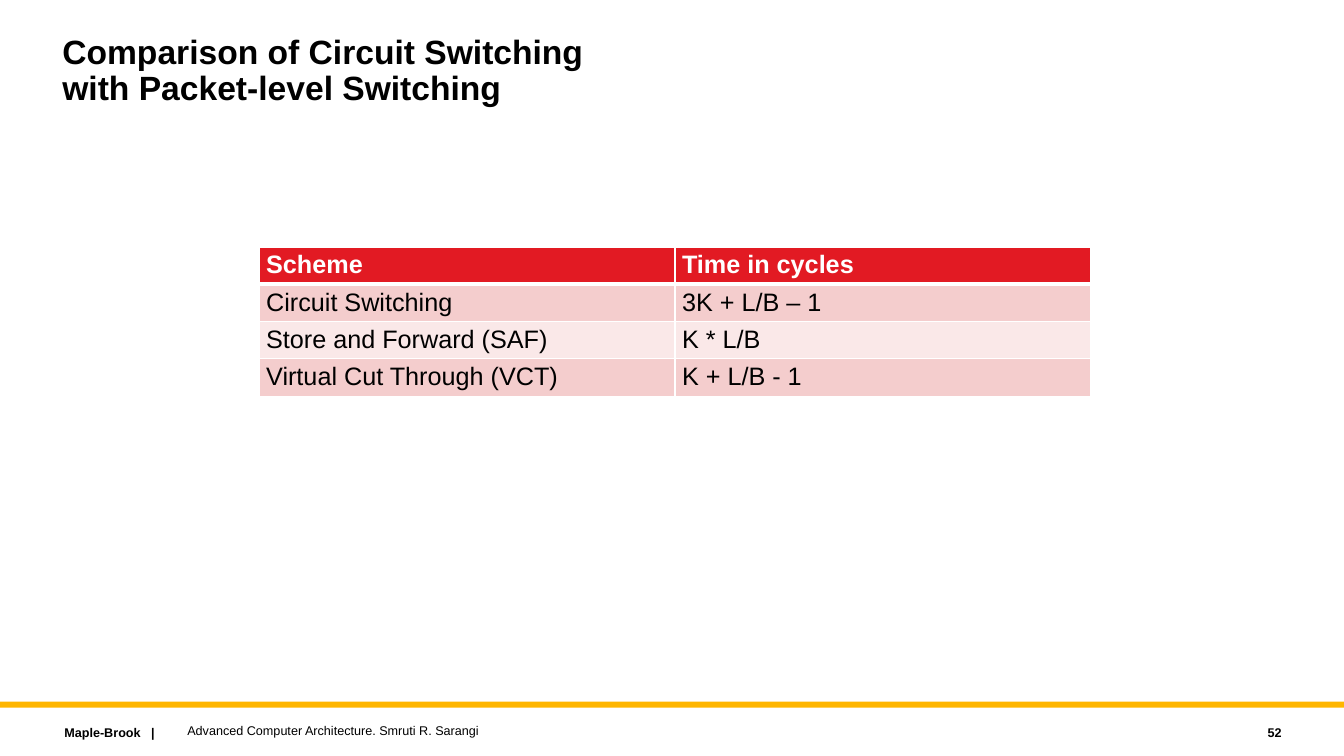
from pptx import Presentation
from pptx.dml.color import RGBColor
from pptx.enum import shapes, text
from pptx.oxml import parse_xml
from pptx.oxml.ns import nsdecls
from pptx.util import Inches, Pt

FONT = "Arial"
COLOURS = {
    "ink": "000000",
    "white": "FFFFFF",
    "header": "E21A23",
    "odd_row": "F4CDCD",
    "even_row": "FAE8E8",
    "bar": "FFB600",
}
SCHEMES = [
    ("Scheme", "Time in cycles"),
    ("Circuit Switching", "3K + L/B – 1"),
    ("Store and Forward (SAF)", "K * L/B"),
    ("Virtual Cut Through (VCT)", "K + L/B - 1"),
]


def colour(name):
    return RGBColor.from_string(COLOURS[name])


def style_runs(para, size, bold=False, ink="ink"):
    for span in para.runs:
        span.font.name = FONT
        span.font.size = Pt(size)
        span.font.bold = bold
        span.font.color.rgb = colour(ink)


def add_label(page, box, words, size, bold=False, align=text.PP_ALIGN.LEFT,
              anchor=text.MSO_ANCHOR.MIDDLE):
    """Add a one-paragraph text box and return its paragraph."""
    frame = page.shapes.add_textbox(*map(Inches, box)).text_frame
    frame.word_wrap = True
    frame.vertical_anchor = anchor
    para = frame.paragraphs[0]
    para.text = words
    para.alignment = align
    style_runs(para, size, bold)
    return para


def add_title(page, box):
    para = add_label(page, box,
                     "Comparison of Circuit Switching\vwith Packet-level Switching",
                     24, True, anchor=text.MSO_ANCHOR.TOP)
    para.line_spacing = 0.9


def border_cell(cell, widths):
    """Draw white borders; widths maps each side's tag to points."""
    properties = cell._tc.get_or_add_tcPr()
    for position, (side, width) in enumerate(widths.items()):
        properties.insert(position, parse_xml(
            f'<a:{side} {nsdecls("a")} w="{Pt(width)}"><a:solidFill>'
            f'<a:srgbClr val="{COLOURS["white"]}"/></a:solidFill></a:{side}>'))


def add_scheme_table(page, box):
    left, top, width, row_height = box
    table = page.shapes.add_table(
        len(SCHEMES), len(SCHEMES[0]), Inches(left), Inches(top),
        Inches(width), Inches(row_height * len(SCHEMES))).table
    for row, values in enumerate(SCHEMES):
        is_header = row == 0
        fill = "header" if is_header else "odd_row" if row % 2 else "even_row"
        widths = {"lnL": 1, "lnR": 1, "lnT": 3 if row == 1 else 1,
                  "lnB": 3 if is_header else 1}
        for column, value in enumerate(values):
            cell = table.cell(row, column)
            cell.margin_left = cell.margin_right = Inches(0.07)
            cell.margin_top, cell.margin_bottom = Inches(0.04), Inches(0.03)
            cell.fill.solid()
            cell.fill.fore_color.rgb = colour(fill)
            border_cell(cell, widths)
            para = cell.text_frame.paragraphs[0]
            para.text = value
            style_runs(para, 18, is_header, "white" if is_header else "ink")


def add_footer(page, box):
    left, top, width, bar_height = box
    bar = page.shapes.add_shape(shapes.MSO_SHAPE.RECTANGLE,
                                *map(Inches, (left, top, width, bar_height)))
    bar.shadow.inherit = False
    bar.fill.solid()
    bar.fill.fore_color.rgb = colour("bar")
    bar.line.fill.background()
    label_top = top + 0.18
    add_label(page, (left + 0.54, label_top, 1.2, 0.25), "Maple-Brook   |", 9, True)
    add_label(page, (left + 1.76, label_top - 0.02, 8, 0.25),
              "Advanced Computer Architecture. Smruti R. Sarangi", 9)
    add_label(page, (left + width - 1.92, label_top, 1.4, 0.25), "52", 9, True,
              text.PP_ALIGN.RIGHT)


def main():
    deck = Presentation()
    deck.slide_width, deck.slide_height = Inches(13.33), Inches(7.5)
    page = deck.slides.add_slide(deck.slide_layouts[6])
    add_title(page, (0.52, 0.3, 10, 0.9))
    add_scheme_table(page, (2.57, 2.45, 8.25, 0.3))
    add_footer(page, (0, 6.96, 13.33, 0.06))
    deck.save("out.pptx")


if __name__ == "__main__":
    main()
